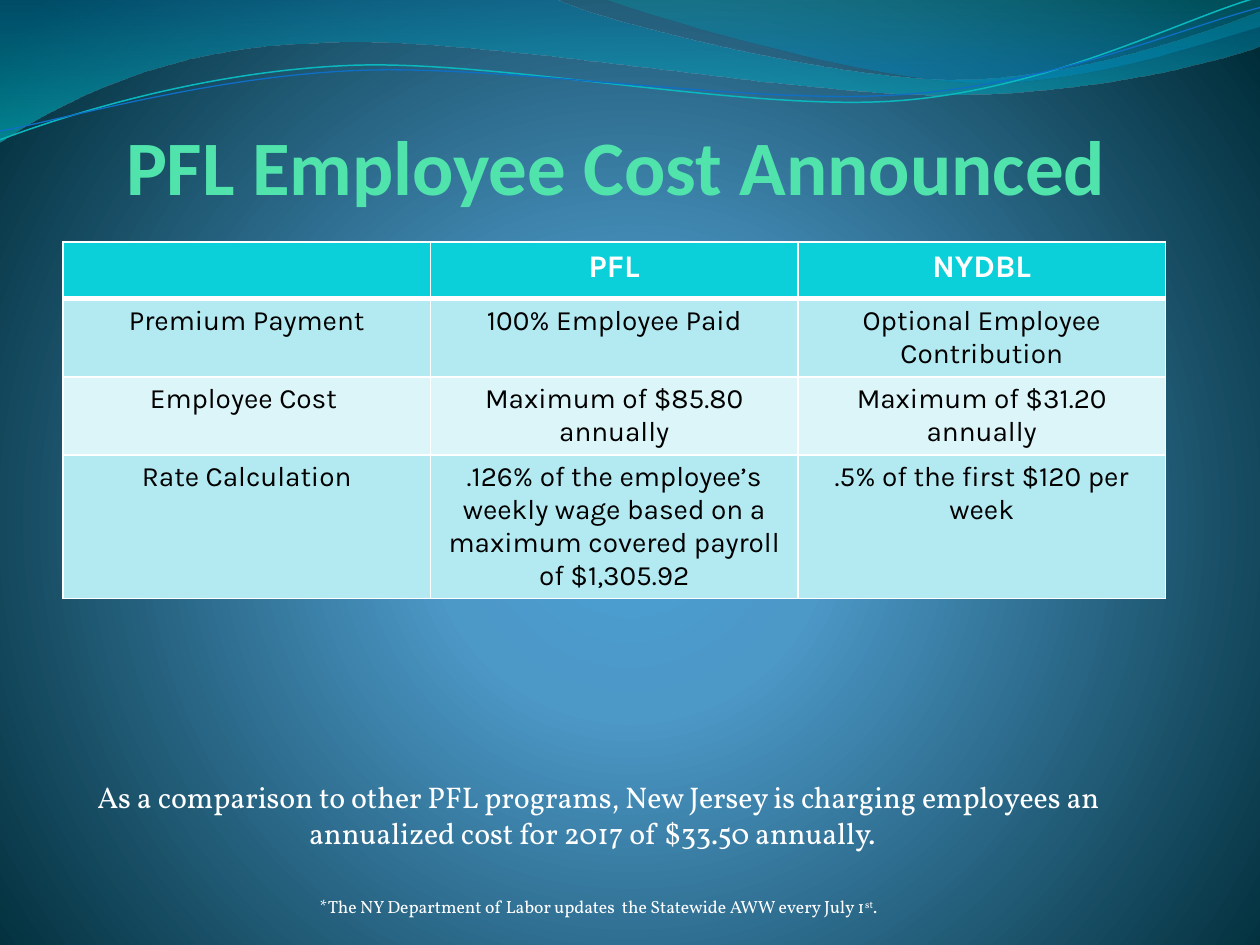
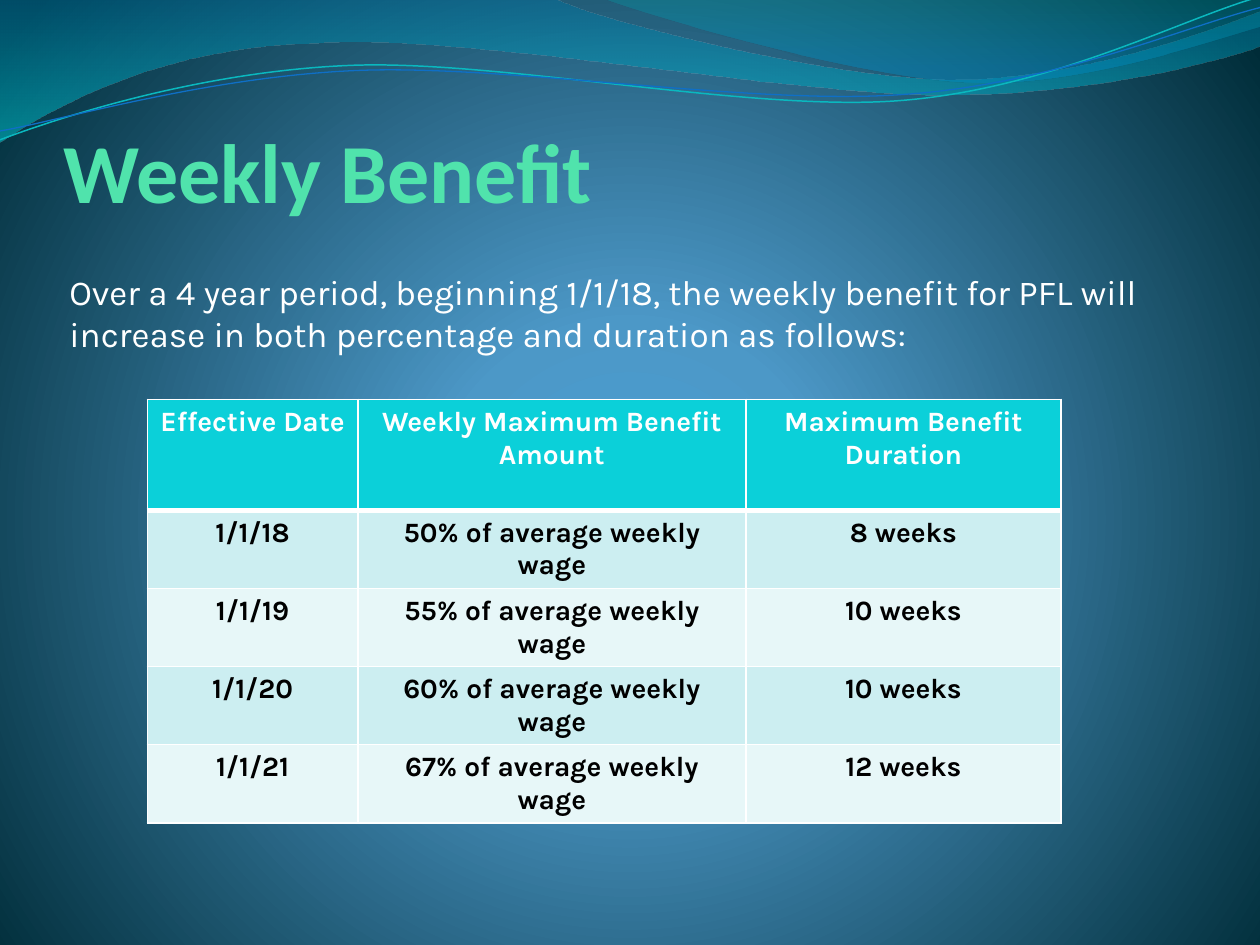
from pptx import Presentation
from pptx.dml.color import RGBColor
from pptx.enum.text import MSO_ANCHOR, MSO_AUTO_SIZE, PP_ALIGN
from pptx.oxml import parse_xml
from pptx.oxml.ns import nsdecls, qn
from pptx.util import Inches, Pt

WHITE, BLACK, MINT, HEADER = "FFFFFF", "000000", "50E3AC", "0BD0D9"

BACKGROUND = [(0, "4AA0D6", 100), (25, "4C98C7", 100), (100, "002C38", 100)]
RADIAL = '<a:path path="circle"><a:fillToRect l="10000" t="110000" r="10000" b="100000"/></a:path>'
DOWNWARD = '<a:lin ang="5400000" scaled="0"/>'

# Each outline is a start point followed by steps: (x, y) is a line, six numbers a Bezier curve.
BANDS = [
    ([(0, 0), (4.4, -0.01), (4.76, 0.17, 6.64, 0.63, 7.58, 0.63),
      (8.53, 0.63, 9.58, 0.26, 10, 0.09), (10.01, 0.36),
      (9.83, 0.44, 8.7, 0.76, 7.46, 0.75), (6.22, 0.75, 3.82, 0.28, 2.57, 0.34),
      (1.29, 0.36, 0.46, 0.83, -0.01, 1.13)],
     [(0, "0074A1", 45), (100, "00C6CF", 55)]),
    ([(4.79, -0.01), (5.09, 0.11, 6.82, 0.62, 7.69, 0.65),
      (8.56, 0.69, 9.61, 0.32, 10, 0.21), (10, 0)],
     [(0, "00A1A9", 30), (80, "008BBF", 45)]),
]
WAVES = [
    ([(0, 1.11), (0.48, 0.93, 1.58, 0.57, 2.77, 0.52), (3.95, 0.47, 5.93, 0.89, 7.13, 0.8),
      (8.33, 0.71, 9.38, 0.15, 9.98, -0.02)], "0AB8BF", 0.85),
    ([(0, 1.04), (0.47, 0.96, 1.64, 0.61, 2.83, 0.56), (4.03, 0.51, 5.97, 0.84, 7.17, 0.75),
      (8.36, 0.67, 9.41, 0.21, 10, 0.06)], "0F6FC6", 0.75),
]

SLIDES = [
    {
        "title": {"text": "PFL Employee Cost Announced", "size": 44,
                  "box": (0.58, 0.5, 8.5, 1.17), "indent": 0.42},
        "body": {"box": (0.5, 2.5, 8.5, 4.17), "top": 3.68, "font": "Vollkorn",
                 "align": PP_ALIGN.CENTER,
                 "paragraphs": [
                     (17.1, 0, [("As a comparison to other PFL programs, New Jersey is charging "
                                 "employees an annualized cost for 2017 of $33.50 annually.  ", 0)]),
                     (10.1, 26, [("*The NY Department of Labor updates  the Statewide AWW "
                                  "every July 1", 0), ("st", 30), (".", 0)])]},
        "table": {"at": (0.5, 1.92), "cols": [8.75 / 3] * 3, "rows": [0.45, 0.62, 0.62, 1.14],
                  "bands": ("B3EAF2", "DBF5F9"), "header_size": 18, "bold": False,
                  "cells": [
                      ("", "PFL", "NYDBL"),
                      ("Premium Payment", "100% Employee Paid", "Optional Employee Contribution"),
                      ("Employee Cost ", "Maximum of $85.80 annually", "Maximum of $31.20 annually"),
                      ("Rate Calculation",
                       ".126% of the employee’s weekly wage based on a maximum covered "
                       "payroll of $1,305.92",
                       ".5% of the first $120 per week")]},
    },
    {
        "title": {"text": "Weekly Benefit", "size": 48, "box": (0.5, 0.5, 9, 1.25), "indent": 0},
        "body": {"box": (0.5, 1.75, 9, 4.95), "top": 0.4, "font": "Karla",
                 "align": PP_ALIGN.LEFT,
                 "paragraphs": [
                     (20, 0, [("Over a 4 year period, beginning 1/1/18, the weekly benefit for PFL "
                               "will increase in both percentage and duration as follows:", 0)])]},
        "table": {"at": (1.17, 3.17), "cols": [1.67, 3.08, 2.5], "rows": [0.88] + [0.62] * 4,
                  "bands": ("CCEEF1", "E7F7F8"), "header_size": 16, "bold": True,
                  "cells": [
                      ("Effective Date", "Weekly Maximum Benefit Amount",
                       "Maximum Benefit Duration"),
                      ("1/1/18", "50% of average weekly wage", "8 weeks"),
                      ("1/1/19", "55% of average weekly wage", "10 weeks"),
                      ("1/1/20", "60% of average weekly wage", "10 weeks"),
                      ("1/1/21", "67% of average weekly wage", "12 weeks")]},
    },
]


def rgb(color):
    """Turn a hex string into a colour."""
    return RGBColor.from_string(color)


def set_gradient(fill, element, stops, direction):
    """Give a fill the listed (position, colour, opacity) stops."""
    fill.gradient()
    gs = "".join(f'<a:gs pos="{pos * 1000}"><a:srgbClr val="{color}">'
                 f'<a:alpha val="{alpha * 1000}"/></a:srgbClr></a:gs>'
                 for pos, color, alpha in stops)
    old = element.find(".//" + qn("a:gradFill"))
    old.getparent().replace(old, parse_xml(
        f'<a:gradFill {nsdecls("a")} rotWithShape="1"><a:gsLst>{gs}</a:gsLst>{direction}</a:gradFill>'))


def add_outline(shapes, outline, close):
    """Draw an outline as a freeform, bending the steps that are curves."""
    start, *ends = [tuple(map(Inches, step[-2:])) for step in outline]
    builder = shapes.build_freeform(*start)
    builder.add_line_segments(ends, close=close)
    s = builder.convert_to_shape()
    s.shadow.inherit = False
    for line, step in zip(s.element.findall(".//" + qn("a:lnTo")), outline[1:]):
        if len(step) == 6:
            pts = "".join(f'<a:pt x="{Inches(x) - s.left}" y="{Inches(y) - s.top}"/>'
                          for x, y in zip(step[::2], step[1::2]))
            line.getparent().replace(line, parse_xml(
                f'<a:cubicBezTo {nsdecls("a")}>{pts}</a:cubicBezTo>'))
    return s


def decorate_master(master, slide):
    """Set the shared background and move the bands and waves to the master."""
    set_gradient(master.background.fill, master.element, BACKGROUND, RADIAL)
    decor = []
    for outline, stops in BANDS:
        s = add_outline(slide.shapes, outline, True)
        set_gradient(s.fill, s.element, stops, DOWNWARD)
        s.line.fill.background()
        decor.append(s)
    for outline, color, width in WAVES:
        s = add_outline(slide.shapes, outline, False)
        s.fill.background()
        s.line.color.rgb = rgb(color)
        s.line.width = Pt(width)
        decor.append(s)
    for i, s in enumerate(decor):
        s.element.find(".//" + qn("p:cNvPr")).set("id", str(100 + i))
        master.shapes.element.insert(2 + i, s.element)


def add_run(p, text, font, size, color, bold=False):
    """Add a formatted run to a paragraph."""
    r = p.add_run()
    r.text = text
    r.font.name, r.font.size, r.font.bold = font, Pt(size), bold
    r.font.color.rgb = rgb(color)
    return r


def place(sp, box, margins, anchor):
    """Move a placeholder and set up its text frame."""
    sp.left, sp.top, sp.width, sp.height = map(Inches, box)
    tf = sp.text_frame
    tf.margin_left, tf.margin_top, tf.margin_right, tf.margin_bottom = map(Inches, margins)
    tf.word_wrap, tf.auto_size, tf.vertical_anchor = True, MSO_AUTO_SIZE.NONE, anchor
    return tf


def fill_title(sp, title):
    """Write the slide title."""
    tf = place(sp, title["box"], (title["indent"], 0, 0, 0), MSO_ANCHOR.BOTTOM)
    p = tf.paragraphs[0]
    p.alignment = PP_ALIGN.LEFT
    add_run(p, title["text"], "Calibri", title["size"], MINT, True)


def fill_body(sp, body):
    """Write the body paragraphs without bullets."""
    tf = place(sp, body["box"], (0.05, body["top"], 0.05, 0.05), MSO_ANCHOR.TOP)
    for i, (size, before, runs) in enumerate(body["paragraphs"]):
        p = tf.add_paragraph() if i else tf.paragraphs[0]
        p.alignment, p.space_before = body["align"], Pt(before)
        pPr = p._p.get_or_add_pPr()
        pPr.set("marL", "0")
        pPr.set("indent", "0")
        pPr.append(parse_xml(f'<a:buNone {nsdecls("a")}/>'))
        for text, raised in runs:
            r = add_run(p, text, body["font"], size, WHITE)
            if raised:
                r._r.get_or_add_rPr().set("baseline", str(raised * 1000))


def set_borders(cell, top, bottom):
    """Draw white cell borders, one point wide at the sides."""
    tcPr = cell._tc.get_or_add_tcPr()
    for side, width in (("L", 1), ("R", 1), ("T", top), ("B", bottom)):
        tcPr.append(parse_xml(
            f'<a:ln{side} {nsdecls("a")} w="{Pt(width)}"><a:solidFill>'
            f'<a:srgbClr val="{WHITE}"/></a:solidFill></a:ln{side}>'))


def add_grid(shapes, grid):
    """Add a table with a header row and two alternating row colours."""
    cols, rows = grid["cols"], grid["rows"]
    box = (*grid["at"], sum(cols), sum(rows))
    table = shapes.add_table(len(rows), len(cols), *map(Inches, box)).table
    for column, width in zip(table.columns, cols):
        column.width = Inches(width)
    for i, (row, height) in enumerate(zip(table.rows, rows)):
        row.height = Inches(height)
        header = i == 0
        for cell, text in zip(row.cells, grid["cells"][i]):
            set_borders(cell, 3 if i == 1 else 1, 3 if header else 1)
            cell.fill.solid()
            cell.fill.fore_color.rgb = rgb(HEADER if header else grid["bands"][(i - 1) % 2])
            p = cell.text_frame.paragraphs[0]
            p.alignment = PP_ALIGN.CENTER
            if text:
                add_run(p, text, "Karla", grid["header_size"] if header else 16,
                        WHITE if header else BLACK, header or grid["bold"])


def main():
    """Build the presentation."""
    prs = Presentation()
    prs.slide_width, prs.slide_height = Inches(10), Inches(7.5)
    for i, content in enumerate(SLIDES):
        slide = prs.slides.add_slide(prs.slide_layouts[1])
        if i == 0:
            decorate_master(prs.slide_master, slide)
        fill_title(slide.shapes.title, content["title"])
        fill_body(slide.placeholders[1], content["body"])
        add_grid(slide.shapes, content["table"])
    prs.save("out.pptx")


if __name__ == "__main__":
    main()
